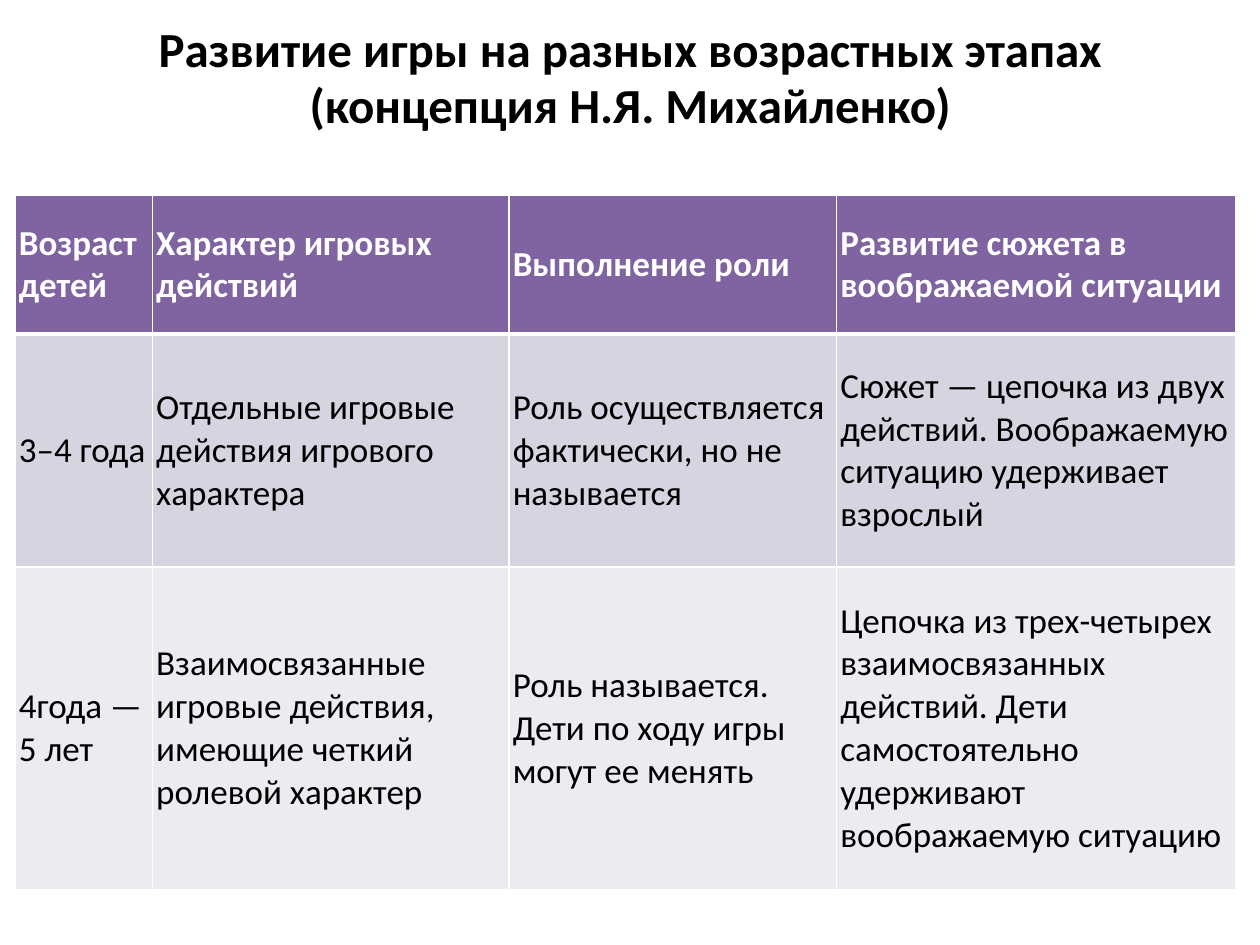
from lxml.etree import SubElement
from pptx import Presentation
from pptx.dml.color import RGBColor
from pptx.enum.text import MSO_ANCHOR as Anchor, PP_ALIGN as Align
from pptx.oxml.ns import qn
from pptx.util import Inches, Pt

TITLE = ["Развитие игры на разных возрастных этапах", "(концепция Н.Я. Михайленко)"]
COLUMN_WIDTHS = [1.09, 2.83, 2.6, 3.17]
ROW_HEIGHTS = [1.1, 1.85, 2.56]
ROW_FILLS = ["8064A2", "D8D3E0", "EDEAF0"]
STAGES = [
    ["Возраст детей", "Характер игровых действий", "Выполнение роли",
     "Развитие сюжета в воображаемой ситуации"],
    ["3–4 года", "Отдельные игровые действия игрового характера",
     "Роль осуществляется фактически, но не называется",
     "Сюжет — цепочка из двух действий. Воображаемую ситуацию удерживает взрослый"],
    ["4года — 5 лет", "Взаимосвязанные игровые действия, имеющие четкий ролевой характер",
     "Роль называется. Дети по ходу игры могут ее менять",
     "Цепочка из трех-четырех взаимосвязанных действий. "
     "Дети самостоятельно удерживают воображаемую ситуацию"],
]


def color(code):
    return RGBColor.from_string(code)


def write(frame, text, size=20, ink="000000", bold=False, align=Align.LEFT, spacing=None):
    frame.word_wrap = True
    frame.text = text
    for paragraph in frame.paragraphs:
        paragraph.alignment = align
        paragraph.line_spacing = spacing
        for run in paragraph.runs:
            run.font.name = "Calibri"
            run.font.size = Pt(size)
            run.font.bold = bold
            run.font.color.rgb = color(ink)


def set_borders(cell, widths, ink="FFFFFF"):
    """Draw cell edges; widths maps L, R, T and B to points."""
    properties = cell._tc.get_or_add_tcPr()
    for position, (side, width) in enumerate(widths.items()):
        edge = SubElement(properties, qn(f"a:ln{side}"), w=str(Pt(width)))
        paint = SubElement(edge, qn("a:solidFill"))
        SubElement(paint, qn("a:srgbClr"), val=ink)
        properties.insert(position, edge)


class SlideBuilder:
    """Holds the current slide and the table style."""

    header_ink = "FFFFFF"
    cell_margin = Inches(0.03)

    def __init__(self, slide):
        self.slide = slide

    def title(self, lines, left, top, width, height):
        box = self.slide.shapes.add_textbox(
            Inches(left), Inches(top), Inches(width), Inches(height))
        frame = box.text_frame
        frame.vertical_anchor = Anchor.MIDDLE
        frame.margin_top = 0
        frame.margin_bottom = Inches(0.6)
        write(frame, "\v".join(lines), size=28, bold=True, align=Align.CENTER, spacing=0.96)

    def table(self, rows, left, top, widths, heights, fills):
        grid = self.slide.shapes.add_table(
            len(rows), len(widths), Inches(left), Inches(top),
            Inches(sum(widths)), Inches(sum(heights))).table
        for column, width in zip(grid.columns, widths):
            column.width = Inches(width)
        for index, (row, height, texts) in enumerate(zip(grid.rows, heights, rows)):
            row.height = Inches(height)
            for cell, text in zip(row.cells, texts):
                self.cell(cell, text, fills[index], index)

    def cell(self, cell, text, fill, row_index):
        header = row_index == 0
        cell.fill.solid()
        cell.fill.fore_color.rgb = color(fill)
        cell.vertical_anchor = Anchor.MIDDLE
        cell.margin_left = cell.margin_right = self.cell_margin
        cell.margin_top = cell.margin_bottom = self.cell_margin
        write(cell.text_frame, text, bold=header,
              ink=self.header_ink if header else "000000")
        set_borders(cell, {"L": 1, "R": 1, "T": 3 if row_index == 1 else 1,
                           "B": 3 if header else 1})


def main():
    deck = Presentation()
    deck.slide_width, deck.slide_height = Inches(10), Inches(7.5)
    builder = SlideBuilder(deck.slides.add_slide(deck.slide_layouts[6]))
    builder.title(TITLE, 0.5, 0.3, 9, 1.25)
    builder.table(STAGES, 0.12, 1.55, COLUMN_WIDTHS, ROW_HEIGHTS, ROW_FILLS)
    deck.save("out.pptx")


if __name__ == "__main__":
    main()
